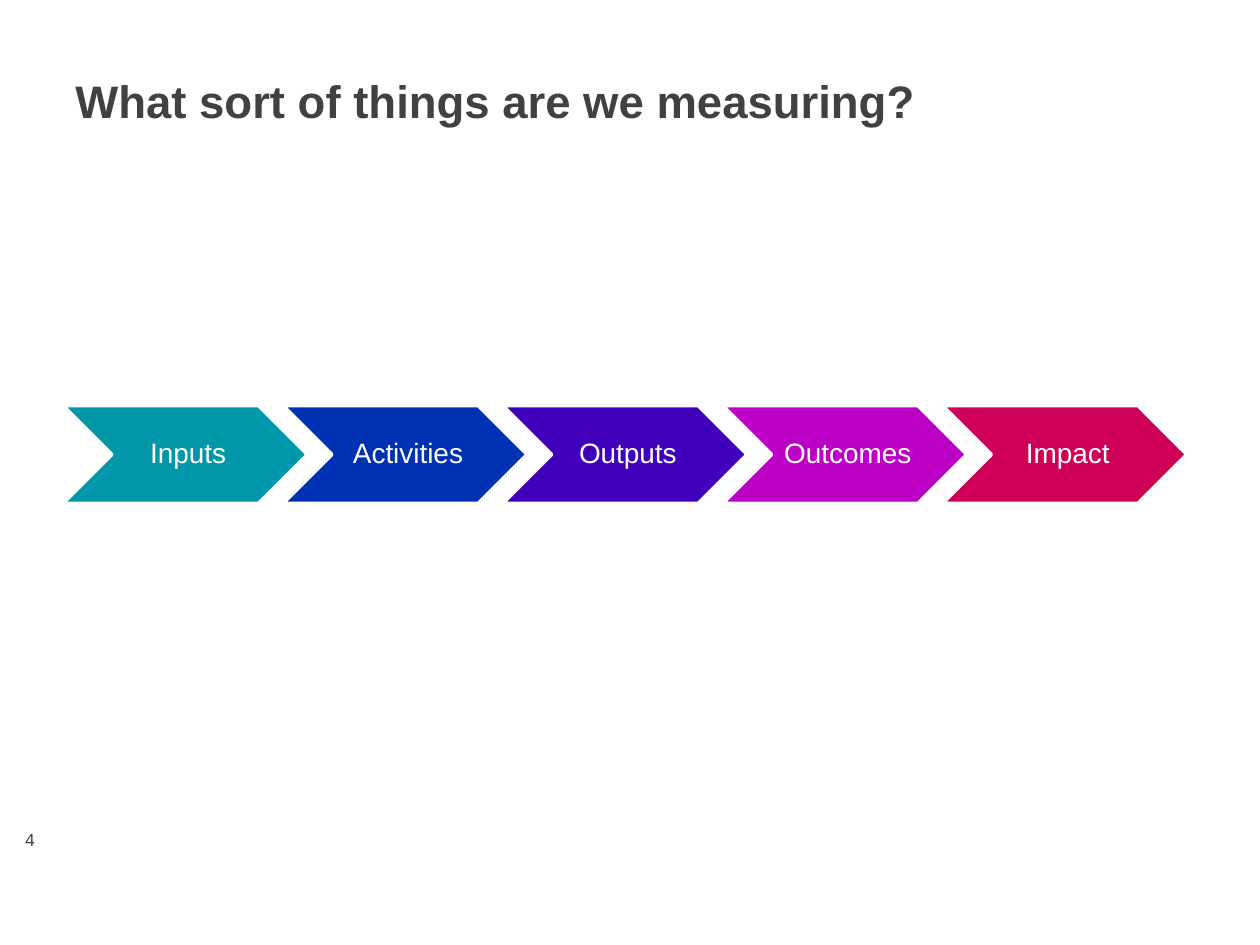
from pptx import Presentation
from pptx.dml.color import RGBColor
from pptx.enum.shapes import MSO_SHAPE
from pptx.enum.text import MSO_ANCHOR, PP_ALIGN
from pptx.util import Pt


def color(value):
    return RGBColor.from_string(value)


def add_text(page, text, left, top, width, height, size, fill="414042", bold=False,
             align=PP_ALIGN.LEFT, anchor=MSO_ANCHOR.MIDDLE, insets=(0, 0, 0, 0), spacing=1.0):
    box = page.shapes.add_textbox(Pt(left), Pt(top), Pt(width), Pt(height))
    frame = box.text_frame
    frame.word_wrap = True
    frame.vertical_anchor = anchor
    frame.margin_left, frame.margin_top, frame.margin_right, frame.margin_bottom = map(Pt, insets)
    para = frame.paragraphs[0]
    para.alignment = align
    para.line_spacing = spacing
    span = para.add_run()
    span.text = text
    span.font.name = "Arial"
    span.font.size = Pt(size)
    span.font.bold = bold
    span.font.color.rgb = color(fill)


deck = Presentation()
deck.slide_width, deck.slide_height = Pt(720), Pt(540)
page = deck.slides.add_slide(deck.slide_layouts[6])

add_text(page, "What sort of things are we measuring?", 36, 35.3, 643, 71.3, 26,
         bold=True, anchor=MSO_ANCHOR.TOP, insets=(7.2, 6.2, 7.2, 3.6))
add_text(page, "4", 14.4, 470.9, 33.8, 17.3, 10, insets=(0, 3.6, 2.9, 3.6))

stages = [
    ("Inputs", "0097A9"),
    ("Activities", "0031B2"),
    ("Outputs", "4000BB"),
    ("Outcomes", "BC00C5"),
    ("Impact", "CE0058"),
]
top, width, height, step = 231.8, 139.6, 55.9, 125.65
label_width = width - height

for index, (name, fill) in enumerate(stages):
    left = 36 + index * step
    chevron = page.shapes.add_shape(MSO_SHAPE.CHEVRON, Pt(left), Pt(top), Pt(width), Pt(height))
    chevron.shadow.inherit = False
    chevron.fill.solid()
    chevron.fill.fore_color.rgb = color(fill)
    chevron.line.color.rgb = color("FFFFFF")
    chevron.line.width = Pt(2)
    add_text(page, name, left + height / 2, top, label_width, height, 16, fill="FFFFFF",
             align=PP_ALIGN.CENTER, insets=(5, 1.6, 1.6, 1.6), spacing=0.9)

deck.save("out.pptx")
